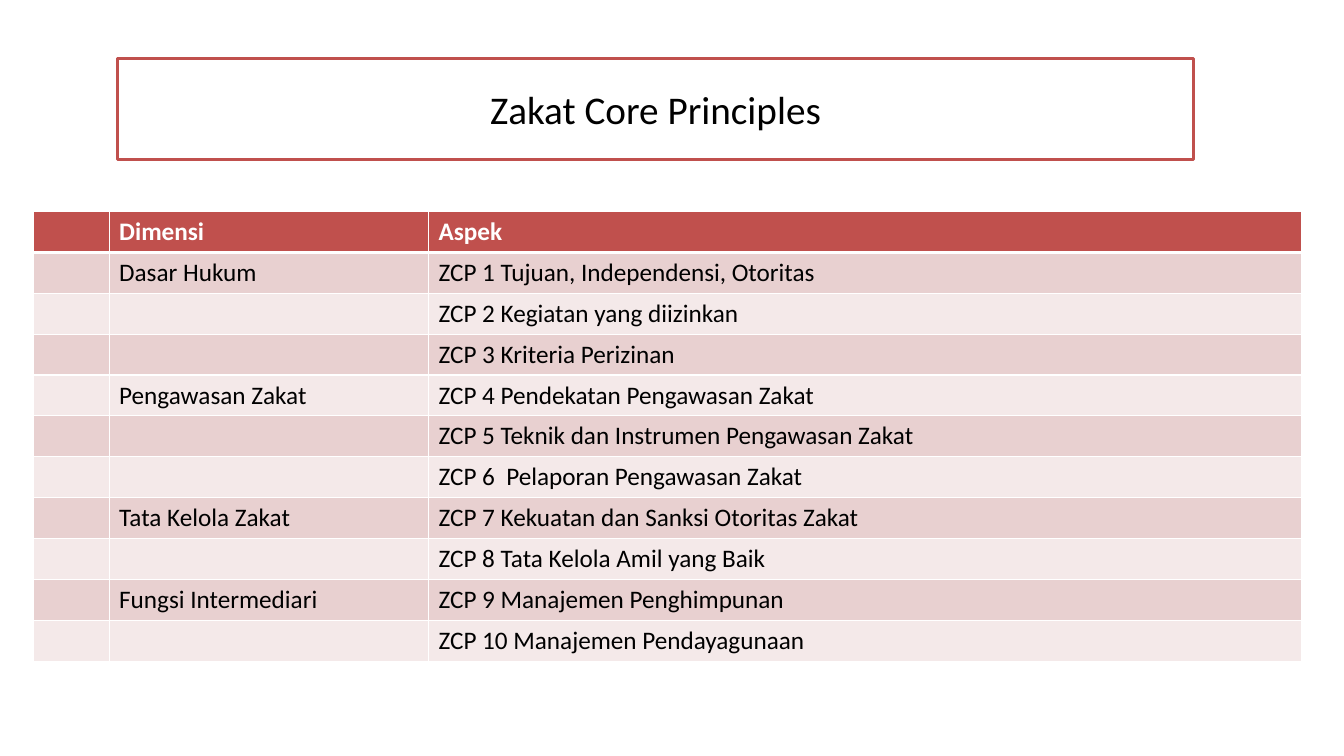
from dataclasses import dataclass

from lxml.etree import SubElement
from pptx import Presentation
from pptx.dml.color import RGBColor
from pptx.enum.text import MSO_ANCHOR, MSO_AUTO_SIZE, PP_ALIGN
from pptx.oxml.ns import qn
from pptx.slide import Slide
from pptx.table import _Cell
from pptx.util import Cm, Pt

COLOURS = {
    "accent": "C0504D",
    "dark band": "E8D0D0",
    "light band": "F4E9E9",
    "white": "FFFFFF",
    "black": "000000",
}
FONT = "Calibri"
COLUMN_WIDTHS = (1.9, 8.05, 22.01)
ROW_HEIGHT = 1.03


@dataclass
class Dimension:
    name: str
    aspects: tuple[str, ...]


DIMENSIONS = (
    Dimension("Dasar Hukum", (
        "ZCP 1 Tujuan, Independensi, Otoritas",
        "ZCP 2 Kegiatan yang diizinkan",
        "ZCP 3 Kriteria Perizinan",
    )),
    Dimension("Pengawasan Zakat", (
        "ZCP 4 Pendekatan Pengawasan Zakat",
        "ZCP 5 Teknik dan Instrumen Pengawasan Zakat",
        "ZCP 6  Pelaporan Pengawasan Zakat",
    )),
    Dimension("Tata Kelola Zakat", (
        "ZCP 7 Kekuatan dan Sanksi Otoritas Zakat",
        "ZCP 8 Tata Kelola Amil yang Baik",
    )),
    Dimension("Fungsi Intermediari", (
        "ZCP 9 Manajemen Penghimpunan",
        "ZCP 10 Manajemen Pendayagunaan",
    )),
)


def colour(name: str) -> RGBColor:
    return RGBColor.from_string(COLOURS[name])


def add_title(page: Slide) -> None:
    title = page.shapes.title
    title.left, title.top, title.width, title.height = Cm(2.97), Cm(1.47), Cm(27.1), Cm(2.54)
    title.fill.solid()
    title.fill.fore_color.rgb = colour("white")
    title.line.color.rgb = colour("accent")
    title.line.width = Pt(2)
    frame = title.text_frame
    frame.text = "Zakat Core Principles"
    frame.auto_size = MSO_AUTO_SIZE.NONE
    frame.vertical_anchor = MSO_ANCHOR.MIDDLE
    paragraph = frame.paragraphs[0]
    paragraph.alignment = PP_ALIGN.CENTER
    font = paragraph.runs[0].font
    font.name, font.size = FONT, Pt(28)
    font.color.rgb = colour("black")


def add_borders(cell: _Cell, top: int, bottom: int) -> None:
    """Draw white borders; top and bottom are widths in points."""
    properties = cell._tc.get_or_add_tcPr()
    for side, width in (("L", 1), ("R", 1), ("T", top), ("B", bottom)):
        line = SubElement(properties, qn(f"a:ln{side}"), w=str(Pt(width)))
        fill = SubElement(line, qn("a:solidFill"))
        SubElement(fill, qn("a:srgbClr"), val=COLOURS["white"])


def format_cell(cell: _Cell, text: str, row: int) -> None:
    is_header = row == 0
    add_borders(cell, top=3 if row == 1 else 1, bottom=3 if is_header else 1)
    band = "accent" if is_header else "dark band" if row % 2 else "light band"
    cell.fill.solid()
    cell.fill.fore_color.rgb = colour(band)
    cell.text_frame.text = text
    for span in cell.text_frame.paragraphs[0].runs:
        span.font.name, span.font.size = FONT, Pt(18)
        span.font.bold = is_header
        span.font.color.rgb = colour("white" if is_header else "black")


def add_principles_table(page: Slide) -> None:
    rows = [("", "Dimensi", "Aspek")]
    for dimension in DIMENSIONS:
        for index, aspect in enumerate(dimension.aspects):
            rows.append(("", "" if index else dimension.name, aspect))
    table = page.shapes.add_table(
        len(rows), len(COLUMN_WIDTHS), Cm(0.85), Cm(5.33),
        Cm(sum(COLUMN_WIDTHS)), Cm(ROW_HEIGHT * len(rows)),
    ).table
    for column, width in zip(table.columns, COLUMN_WIDTHS):
        column.width = Cm(width)
    for row, texts in enumerate(rows):
        table.rows[row].height = Cm(ROW_HEIGHT)
        for column, text in enumerate(texts):
            format_cell(table.cell(row, column), text, row)


def main() -> None:
    deck = Presentation()
    deck.slide_width, deck.slide_height = Cm(33.87), Cm(19.05)
    page = deck.slides.add_slide(deck.slide_layouts.get_by_name("Title Only"))
    add_title(page)
    add_principles_table(page)
    deck.save("out.pptx")


if __name__ == "__main__":
    main()
